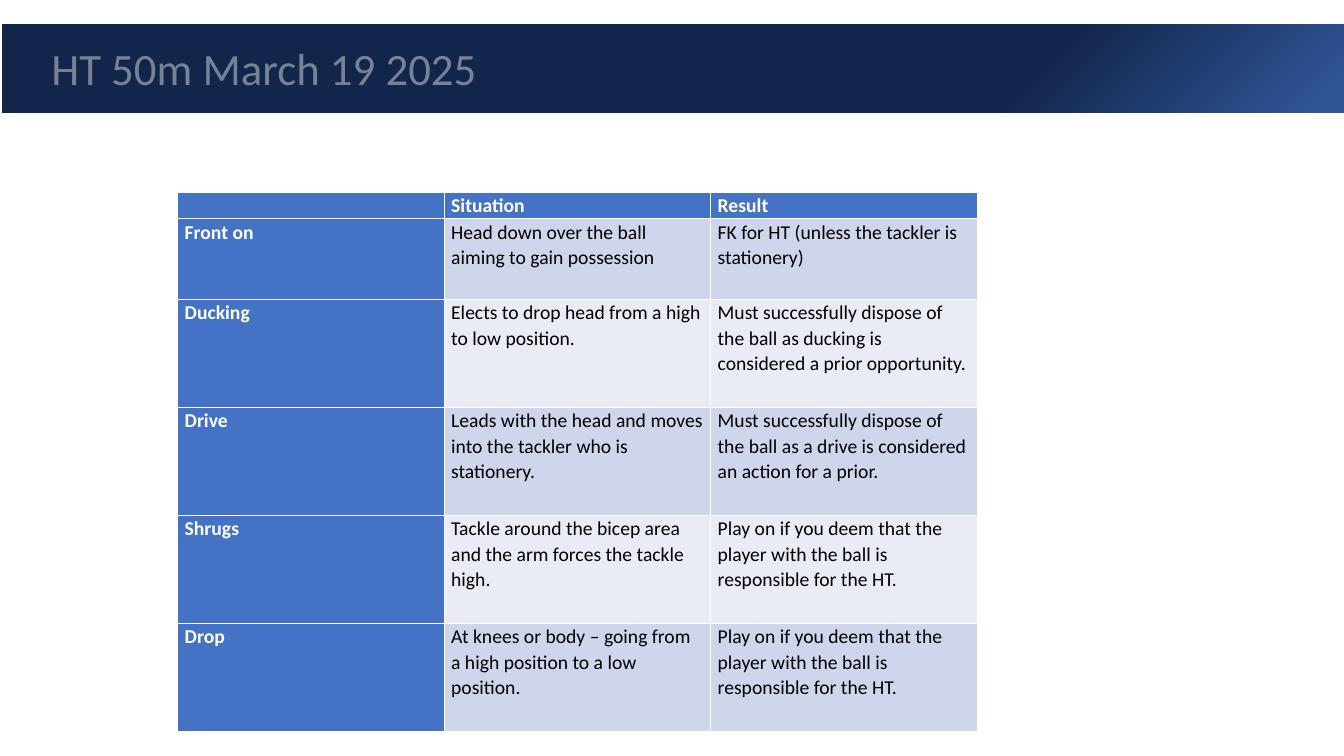
from lxml import etree
from pptx import Presentation
from pptx.dml.color import RGBColor
from pptx.enum.shapes import MSO_SHAPE as Shape
from pptx.enum.text import MSO_ANCHOR as Anchor, PP_ALIGN as Align
from pptx.oxml import parse_xml
from pptx.oxml.ns import nsdecls, qn
from pptx.util import Pt

TITLE = "HT 50m March 19 2025"
RULINGS = [
    ("", "Situation", "Result"),
    ("Front on", "Head down over the ball aiming to gain possession",
     "FK for HT (unless the tackler is stationery)"),
    ("Ducking", "Elects to drop head from a high to low position.",
     "Must successfully dispose of the ball as ducking is considered a prior opportunity."),
    ("Drive", "Leads with the head and moves into the tackler who is stationery.",
     "Must successfully dispose of the ball as a drive is considered an action for a prior."),
    ("Shrugs", "Tackle around the bicep area and the arm forces the tackle high.",
     "Play on if you deem that the player with the ball is responsible for the HT."),
    ("Drop", "At knees or body – going from a high position to a low position.",
     "Play on if you deem that the player with the ball is responsible for the HT."),
]
ROW_HEIGHTS = [18.7, 57.6] + [77.2] * 4
COLUMN_WIDTH = 190.4

FONT = "Calibri"
WHITE = RGBColor(0xFF, 0xFF, 0xFF)
BLACK = RGBColor(0, 0, 0)
GREY = RGBColor(0x77, 0x82, 0x96)
NAVY = RGBColor(0x12, 0x26, 0x4B)
BLUE = RGBColor(0x2F, 0x55, 0x97)
HEADING = RGBColor(0x44, 0x72, 0xC4)
STRIPES = [RGBColor(0xE9, 0xEB, 0xF5), RGBColor(0xCF, 0xD5, 0xEA)]


def set_font(paragraph, size, color, bold=False):
    font = paragraph.font
    font.name, font.size, font.bold = FONT, Pt(size), bold
    font.color.rgb = color


def add_band(slide):
    band = slide.shapes.add_shape(Shape.RECTANGLE, Pt(1.4), Pt(17.3), Pt(960), Pt(63.4))
    band.shadow.inherit = False
    band.line.fill.background()
    gradient = parse_xml(
        f'<a:gradFill {nsdecls("a")} rotWithShape="1"><a:gsLst>'
        f'<a:gs pos="2000"><a:srgbClr val="{BLUE}"/></a:gs>'
        f'<a:gs pos="25000"><a:srgbClr val="{NAVY}"/></a:gs></a:gsLst>'
        '<a:path path="circle"><a:fillToRect l="100000" t="100000"/></a:path>'
        '<a:tileRect r="-100000" b="-100000"/></a:gradFill>')
    band._element.spPr.find(qn("a:prstGeom")).addnext(gradient)
    slide.shapes._spTree.insert(2, band._element)


def add_title(slide):
    title = slide.shapes.title
    title.left, title.top, title.width, title.height = Pt(36.7), Pt(28.8), Pt(802.8), Pt(52.6)
    frame = title.text_frame
    frame.margin_left = frame.margin_top = frame.margin_right = frame.margin_bottom = 0
    frame.vertical_anchor = Anchor.TOP
    frame.text = TITLE
    paragraph = frame.paragraphs[0]
    paragraph.alignment = Align.LEFT
    paragraph.space_before = Pt(12)
    set_font(paragraph, 32, GREY)


def add_rulings(slide):
    columns = len(RULINGS[0])
    table = slide.shapes.add_table(
        len(RULINGS), columns, Pt(126.9), Pt(137.6),
        Pt(COLUMN_WIDTH * columns), Pt(sum(ROW_HEIGHTS))).table
    table.first_col = True
    for column in table.columns:
        column.width = Pt(COLUMN_WIDTH)
    for r, (ruling, height) in enumerate(zip(RULINGS, ROW_HEIGHTS)):
        table.rows[r].height = Pt(height)
        for c, wording in enumerate(ruling):
            heading = r == 0 or c == 0
            cell = table.cell(r, c)
            cell.fill.solid()
            cell.fill.fore_color.rgb = HEADING if heading else STRIPES[r % 2]
            cell.margin_left = cell.margin_right = Pt(5)
            cell.margin_top = cell.margin_bottom = 0
            cell.text = wording
            paragraph = cell.text_frame.paragraphs[0]
            paragraph.line_spacing = 1.07
            paragraph.space_after = Pt(8)
            set_font(paragraph, 14, WHITE if heading else BLACK, heading)
            if not wording:
                end = etree.SubElement(paragraph._p, qn("a:endParaRPr"))
                end.set("sz", "1400")


def main():
    deck = Presentation()
    deck.slide_width, deck.slide_height = Pt(960), Pt(540)
    slide = deck.slides.add_slide(deck.slide_layouts[5])
    add_band(slide)
    add_title(slide)
    add_rulings(slide)
    deck.save("out.pptx")


if __name__ == "__main__":
    main()
